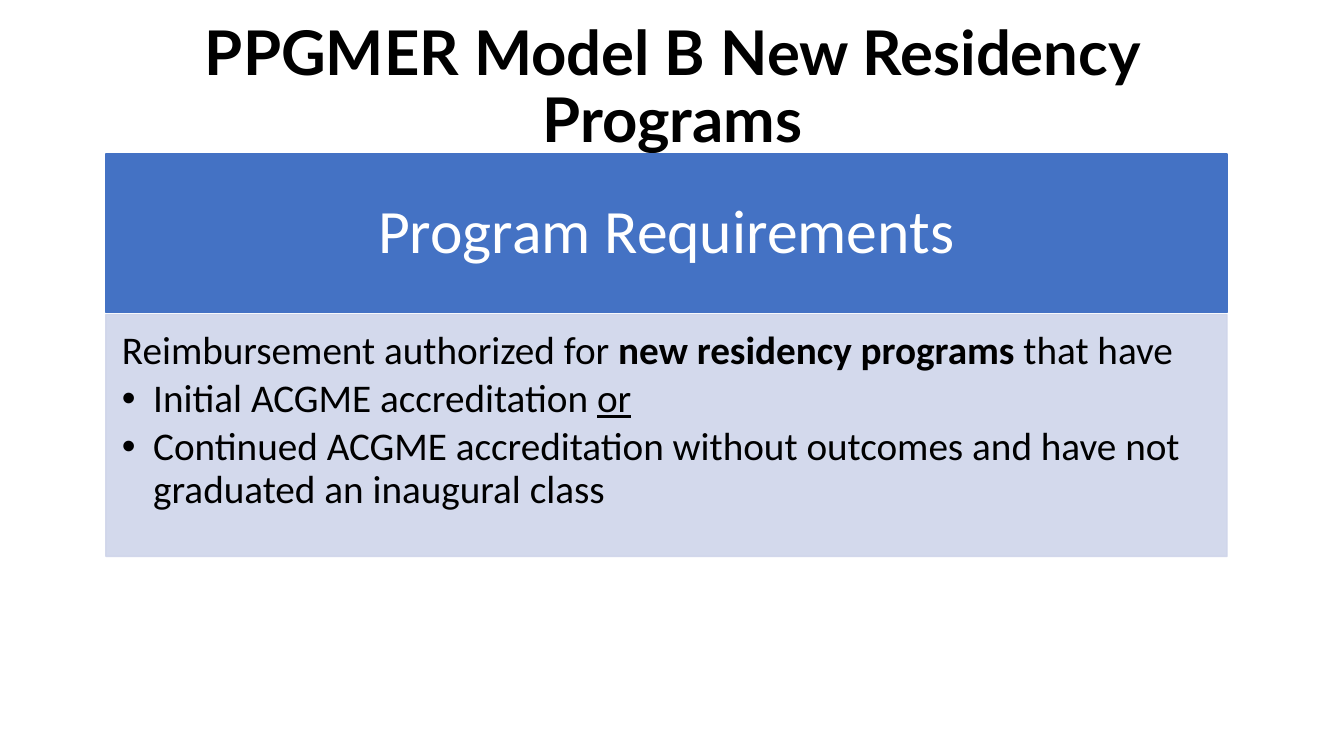
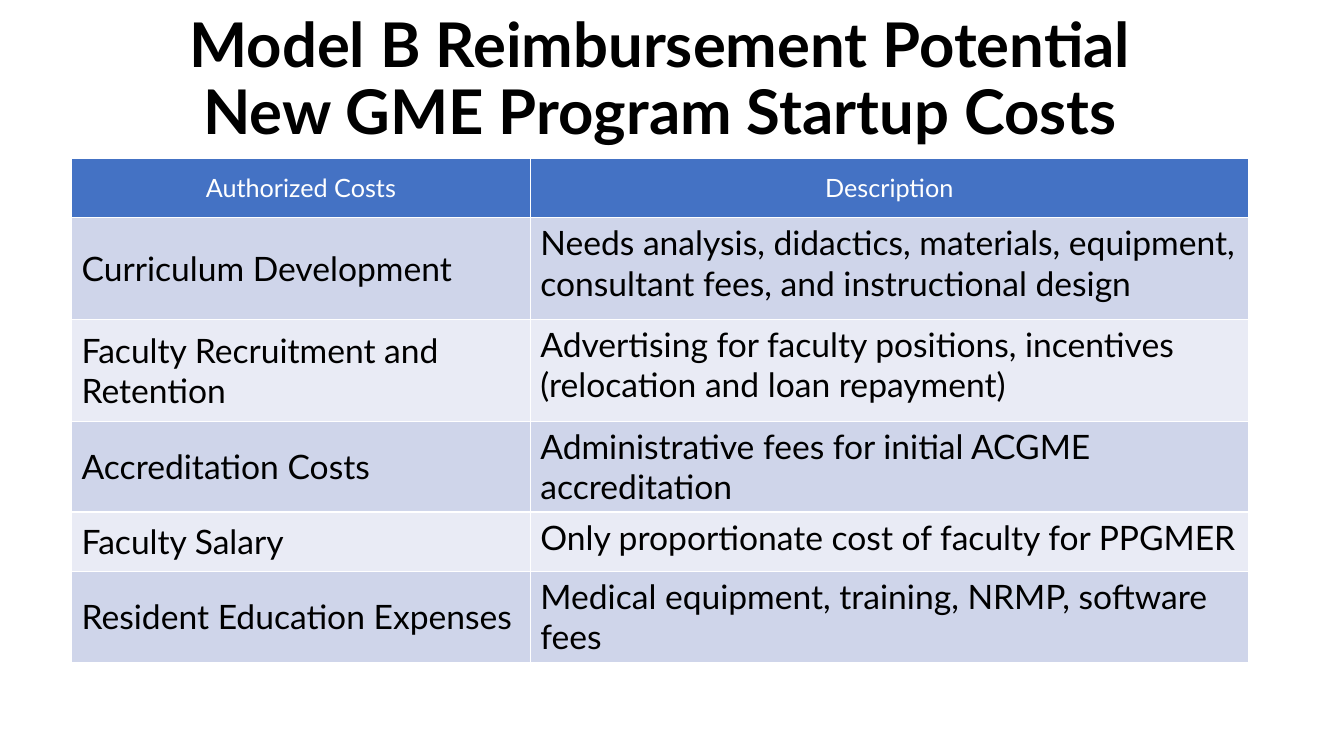
import pptx
import pptx.dml.color
import pptx.enum.text
import pptx.enum.shapes
import pptx.oxml
import pptx.oxml.ns
import pptx.util
from lxml import etree

Inches, Pt = pptx.util.Inches, pptx.util.Pt
ALIGN = pptx.enum.text.PP_ALIGN
ANCHOR = pptx.enum.text.MSO_ANCHOR
qn = pptx.oxml.ns.qn

BLUE, PALE, PALER = "4472C4", "CFD5EA", "E9EBF5"
BLACK, WHITE = "000000", "FFFFFF"


def color(value):
    return pptx.dml.color.RGBColor.from_string(value)


def style(para, name, size, value, align):
    para.alignment = align
    para.font.name = name
    para.font.size = Pt(size)
    para.font.color.rgb = color(value)


deck = pptx.Presentation()
deck.slide_width, deck.slide_height = Inches(13.33), Inches(7.5)

# Titles
titles = [
    ("PPGMER Model B New Residency Programs", 0.92, 0.4, 0.97),
    ("Model B Reimbursement Potential\vNew GME Program Startup Costs", 0.8, 0.08, 1.45),
]
pages = []
for text, left, top, height in titles:
    page = deck.slides.add_slide(deck.slide_layouts[5])
    title = page.shapes.title
    title.left, title.top = Inches(left), Inches(top)
    title.width, title.height = Inches(11.5), Inches(height)
    frame = title.text_frame
    frame.text = text
    frame.word_wrap = True
    frame.auto_size = pptx.enum.text.MSO_AUTO_SIZE.NONE
    frame.vertical_anchor = ANCHOR.MIDDLE
    para = frame.paragraphs[0]
    style(para, "Lato", 44, BLACK, ALIGN.CENTER)
    para.font.bold = True
    para.line_spacing = 0.9
    pages.append(page)
requirements_page, costs_page = pages

# Requirements panel: heading band above a slightly transparent body
bands = [
    (1.53, 1.57, BLUE, ANCHOR.MIDDLE, (0.34, 0.2, 0.34, 0.2)),
    (3.12, 2.4, PALE, ANCHOR.TOP, (0.16, 0.16, 0.22, 0.24)),
]
frames = []
for top, height, fill, anchor, insets in bands:
    box = requirements_page.shapes.add_shape(
        pptx.enum.shapes.MSO_SHAPE.RECTANGLE,
        Inches(1.05), Inches(top), Inches(11.12), Inches(height))
    box.shadow.inherit = False
    box.fill.solid()
    box.fill.fore_color.rgb = color(fill)
    box.line.color.rgb = color(fill)
    box.line.width = Pt(1)
    if fill == PALE:
        for tint in box._element.spPr.iter(qn("a:srgbClr")):
            etree.SubElement(tint, qn("a:alpha"), val="90000")
    frame = box.text_frame
    frame.word_wrap = True
    frame.vertical_anchor = anchor
    (frame.margin_left, frame.margin_top,
     frame.margin_right, frame.margin_bottom) = map(Inches, insets)
    frames.append(frame)
heading, body = frames

para = heading.paragraphs[0]
para.text = "Program Requirements"
para.line_spacing = 0.9
style(para, "Calibri", 44, WHITE, ALIGN.CENTER)

# Each line: bulleted or not, then its spans with their emphasis
lines = [
    (False, [("Reimbursement authorized for ", ""), ("new residency programs ", "bold"),
             ("that have", "")]),
    (True, [("Initial ACGME accreditation ", ""), ("or", "underline")]),
    (True, [("Continued ACGME accreditation without outcomes and have not "
             "graduated an inaugural class", "")]),
]
for index, (bulleted, spans) in enumerate(lines):
    para = body.add_paragraph() if index else body.paragraphs[0]
    properties = para._p.get_or_add_pPr()
    properties.set("marL", str(Inches(0.31)))
    properties.set("indent", str(-Inches(0.31)))
    if bulleted:
        etree.SubElement(properties, qn("a:buFont"), typeface="Arial")
        etree.SubElement(properties, qn("a:buChar"), char="•")
    para.line_spacing = 0.9
    para.space_after = Pt(4.2)
    style(para, "Calibri", 28, BLACK, ALIGN.LEFT)
    for text, emphasis in spans:
        span = para.add_run()
        span.text = text
        if emphasis:
            setattr(span.font, emphasis, True)

# Startup costs table
costs = [
    ("Authorized Costs", "Description"),
    ("Curriculum Development",
     "Needs analysis, didactics, materials, equipment, consultant fees, "
     "and instructional design"),
    ("Faculty Recruitment and Retention",
     "Advertising for faculty positions, incentives (relocation and loan repayment)"),
    ("Accreditation Costs", "Administrative fees for initial ACGME accreditation"),
    ("Faculty Salary", "Only proportionate cost of faculty for PPGMER"),
    ("Resident Education Expenses", "Medical equipment, training, NRMP, software fees"),
]
widths = [4.55, 7.12]
heights = [0.59, 1.01, 1.01, 0.9, 0.59, 0.9]
table = costs_page.shapes.add_table(
    len(costs), len(widths), Inches(0.71), Inches(1.57),
    Inches(sum(widths)), Inches(sum(heights))).table
for column, width in zip(table.columns, widths):
    column.width = Inches(width)
for row, height in zip(table.rows, heights):
    row.height = Inches(height)

for r, texts in enumerate(costs):
    for c, text in enumerate(texts):
        header = r == 0
        cell = table.cell(r, c)
        cell.text = text
        cell.vertical_anchor = ANCHOR.MIDDLE if header or c == 0 else ANCHOR.TOP
        cell.fill.solid()
        cell.fill.fore_color.rgb = color(BLUE if header else PALE if r % 2 else PALER)
        para = cell.text_frame.paragraphs[0]
        style(para, "Lato", 18 if header else 24, WHITE if header else BLACK,
              ALIGN.CENTER if header else ALIGN.LEFT)
        para.font.bold = False
        # White cell borders, which come before the fill
        properties = cell._tc.get_or_add_tcPr()
        for position, side in enumerate(("lnL", "lnR", "lnT", "lnB")):
            border = etree.Element(qn("a:" + side), w=str(Pt(1)))
            paint = etree.SubElement(border, qn("a:solidFill"))
            etree.SubElement(paint, qn("a:srgbClr"), val=WHITE)
            properties.insert(position, border)

deck.save("out.pptx")
